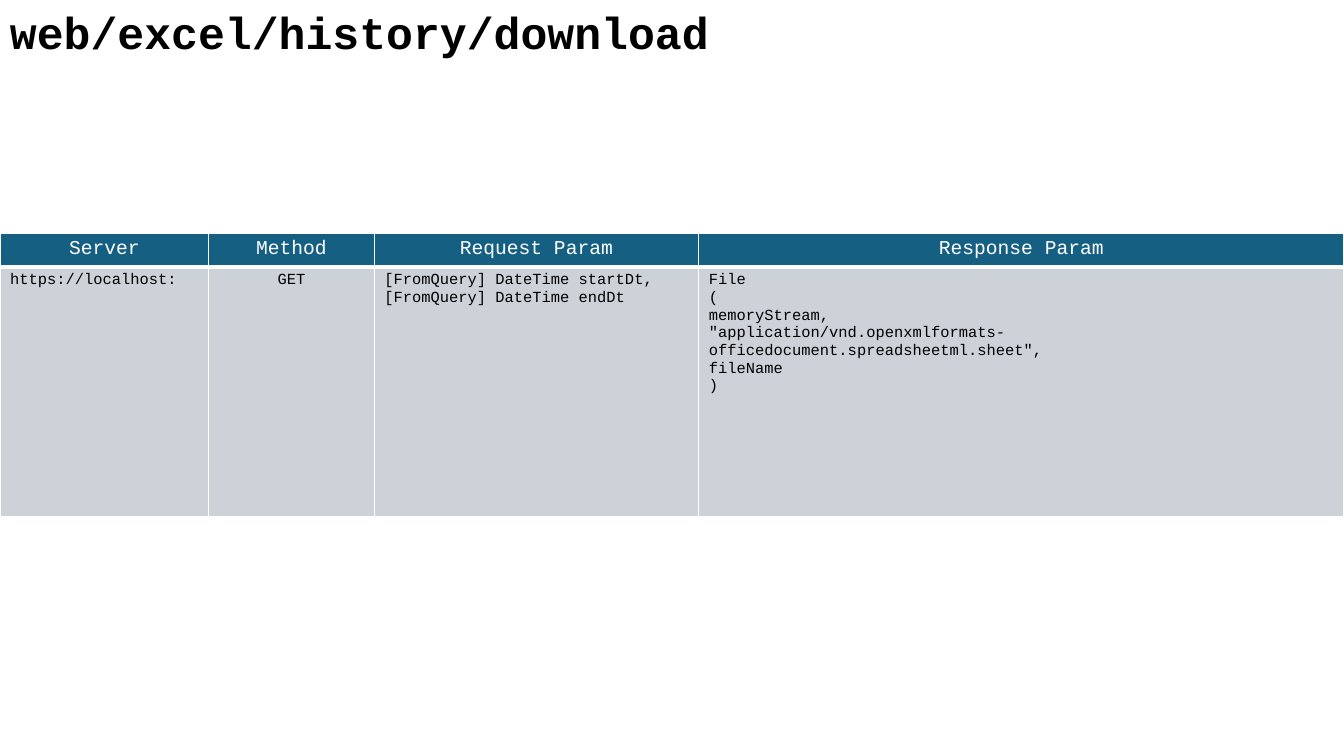
from lxml.etree import SubElement
from pptx import Presentation
from pptx.dml.color import RGBColor
from pptx.enum.text import MSO_AUTO_SIZE, PP_ALIGN
from pptx.oxml.ns import qn
from pptx.util import Cm, Pt

FONT = "Courier New"
COLORS = {"text": "000000", "white": "FFFFFF", "head": "156082", "body": "CCD2D8"}
WIDTHS = [5.26, 4.17, 8.18, 16.26]
HEIGHTS = [0.84, 6.3]
HEADS = ["Server", "Method", "Request Param", "Response Param"]
VALUES = [
    "https://localhost:",
    "GET",
    "[FromQuery] DateTime startDt,\n[FromQuery] DateTime endDt",
    'File\n(\nmemoryStream,\n'
    '"application/vnd.openxmlformats-officedocument.spreadsheetml.sheet",\n'
    'fileName\n)',
]


def style(frame, size, color, align=PP_ALIGN.LEFT, bold=False):
    for para in frame.paragraphs:
        para.alignment = align
        for run in para.runs:
            font = run.font
            font.name = FONT
            font.size = Pt(size)
            font.bold = bold
            font.color.rgb = RGBColor.from_string(COLORS[color])


def add_title(slide, text):
    box = slide.shapes.add_textbox(0, 0, Cm(24), Cm(1.63))
    frame = box.text_frame
    frame.word_wrap = True
    frame.auto_size = MSO_AUTO_SIZE.SHAPE_TO_FIT_TEXT
    frame.text = text
    style(frame, 32, "text", bold=True)


def set_edges(cell, base):
    """Draw white cell borders; base is the bottom width in points."""
    props = cell._tc.get_or_add_tcPr()
    for side, width in zip("LRTB", (1, 1, 1, base)):
        line = SubElement(props, qn(f"a:ln{side}"), w=str(Pt(width)))
        fill = SubElement(line, qn("a:solidFill"))
        SubElement(fill, qn("a:srgbClr"), val=COLORS["white"])


def fill_cell(cell, text, size, color, back, align, base):
    set_edges(cell, base)
    cell.fill.solid()
    cell.fill.fore_color.rgb = RGBColor.from_string(COLORS[back])
    cell.text_frame.text = text
    style(cell.text_frame, size, color, align)


def add_grid(slide):
    frame = slide.shapes.add_table(
        2, len(HEADS), 0, Cm(5.88), Cm(sum(WIDTHS)), Cm(sum(HEIGHTS)))
    table = frame.table
    for row, height in zip(table.rows, HEIGHTS):
        row.height = Cm(height)
    for col, width in enumerate(WIDTHS):
        table.columns[col].width = Cm(width)
        fill_cell(table.cell(0, col), HEADS[col], 14, "white", "head",
                  PP_ALIGN.CENTER, 3)
        align = PP_ALIGN.CENTER if HEADS[col] == "Method" else PP_ALIGN.LEFT
        fill_cell(table.cell(1, col), VALUES[col], 11, "text", "body", align, 1)


def main():
    deck = Presentation()
    deck.slide_width = Cm(33.87)
    deck.slide_height = Cm(19.05)
    slide = deck.slides.add_slide(deck.slide_layouts[6])
    add_title(slide, "web/excel/history/download")
    add_grid(slide)
    deck.save("out.pptx")


if __name__ == "__main__":
    main()
